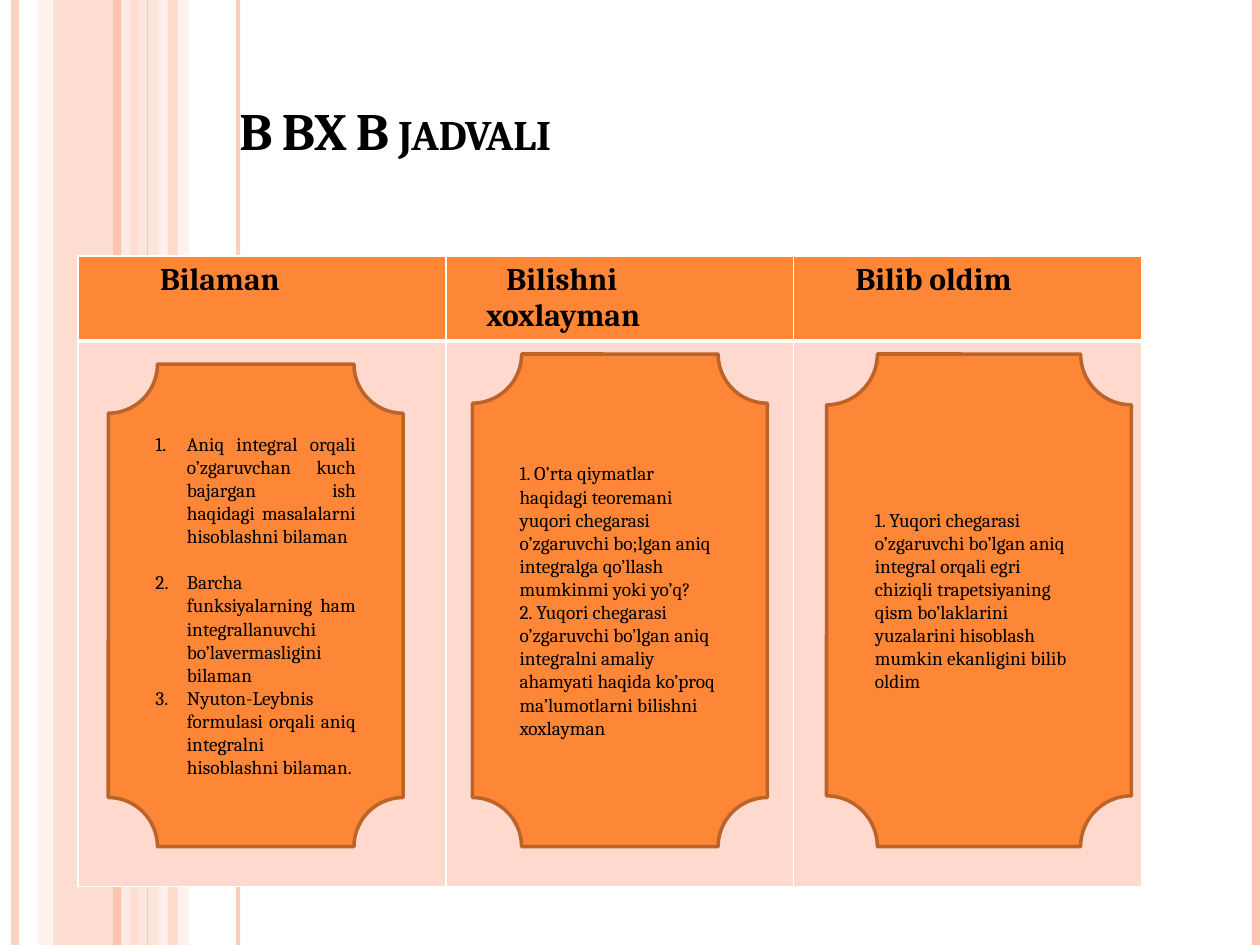
import pptx
import pptx.util
import pptx.dml.color
import pptx.enum.shapes
import pptx.enum.text
import pptx.oxml.ns
import lxml.etree

Inches, Pt = pptx.util.Inches, pptx.util.Pt
RGBColor = pptx.dml.color.RGBColor
SHAPE = pptx.enum.shapes.MSO_SHAPE
ANCHOR = pptx.enum.text.MSO_ANCHOR
ALIGN = pptx.enum.text.PP_ALIGN
qn = pptx.oxml.ns.qn

BLACK = RGBColor(0x00, 0x00, 0x00)
WHITE = RGBColor(0xFF, 0xFF, 0xFF)
ORANGE = RGBColor(0xFE, 0x86, 0x37)
BROWN = RGBColor(0xBC, 0x63, 0x29)
PEACH = RGBColor(0xFE, 0xC3, 0xAE)
PALE = RGBColor(0xFF, 0xD9, 0xCE)
PALEST = RGBColor(0xFF, 0xED, 0xE8)

FONT = "Cambria"

BANDS = [
    (0.42, 0.67, PEACH, 54),
    (0.3, 0.11, PALE, 36),
    (1.08, 0.2, PALE, 70),
    (1.25, 0.25, PALEST, 71),
    (1.33, 0.08, PEACH, 51),
]
STRIPES = [
    (0.12, 4.5, PEACH, 73),
    (1, 4.5, PALEST, 83),
    (0.93, 4.5, PEACH, 100),
    (1.89, 2.25, PEACH, 82),
    (1.17, 0.75, PEACH, 100),
    (9.97, 4.5, PEACH, 100),
]
HEADERS = [
    [("Bilaman", 0.55)],
    [("Bilishni", 0.38), ("xoxlayman", 0.22)],
    [("Bilib oldim", 0.39)],
]
KNOWN = [
    "Aniq integral orqali o’zgaruvchan kuch bajargan ish haqidagi masalalarni "
    "hisoblashni bilaman",
    "Barcha funksiyalarning ham integrallanuvchi bo’lavermasligini bilaman",
    "Nyuton-Leybnis formulasi orqali aniq integralni hisoblashni bilaman.",
]
WANTED = [
    "1. O’rta qiymatlar haqidagi teoremani yuqori chegarasi o’zgaruvchi bo;lgan "
    "aniq integralga qo’llash mumkinmi yoki yo’q?",
    "2. Yuqori chegarasi o’zgaruvchi bo’lgan aniq integralni amaliy ahamyati "
    "haqida ko’proq ma’lumotlarni bilishni xoxlayman",
]
LEARNED = [
    "1. Yuqori chegarasi o’zgaruvchi bo’lgan aniq integral orqali egri chiziqli "
    "trapetsiyaning qism bo’laklarini yuzalarini hisoblash mumkin ekanligini "
    "bilib oldim",
]


def set_alpha(fill, percent):
    """Make a solid fill partly transparent."""
    color = fill._xPr.find(qn("a:solidFill"))[0]
    lxml.etree.SubElement(color, qn("a:alpha")).set("val", str(percent * 1000))


def set_indent(p, left, first=0):
    """Indent a paragraph and its first line, in inches."""
    pPr = p._p.get_or_add_pPr()
    pPr.set("marL", str(Inches(left)))
    pPr.set("indent", str(Inches(first)))


def format_runs(p, size, bold=False):
    """Give the runs of a paragraph the slide's font."""
    for r in p.runs:
        r.font.name = FONT
        r.font.size = Pt(size)
        r.font.bold = bold
        r.font.color.rgb = BLACK


def add_band(s, left, width, color, opacity):
    """Add a translucent full-height band."""
    sp = s.shapes.add_shape(SHAPE.RECTANGLE, Inches(left), 0, Inches(width), Inches(7.5))
    sp.shadow.inherit = False
    sp.fill.solid()
    sp.fill.fore_color.rgb = color
    set_alpha(sp.fill, opacity)
    sp.line.fill.background()


def add_stripe(s, x, weight, color, opacity):
    """Add a full-height vertical line."""
    line = s.shapes.add_connector(
        pptx.enum.shapes.MSO_CONNECTOR.STRAIGHT, Inches(x), 0, Inches(x), Inches(7.5))
    line.line.width = Pt(weight)
    line.line.color.rgb = color
    set_alpha(line.line.fill, opacity)
    lxml.etree.SubElement(line._element.spPr, qn("a:effectLst"))


def set_title(s, text):
    """Place the title in small capitals in front of the bands."""
    sp = s.shapes.title
    s.shapes._spTree.append(sp._element)
    sp.left, sp.top, sp.width, sp.height = map(Inches, (0.7, 0.55, 8.55, 0.78))
    tf = sp.text_frame
    tf.text = text
    tf.vertical_anchor = ANCHOR.BOTTOM
    p = tf.paragraphs[0]
    p.alignment = ALIGN.LEFT
    set_indent(p, 1.1)
    format_runs(p, 30, bold=True)
    p.runs[0].font._element.set("cap", "small")


def style_cell(cell, color, bottom):
    """Fill a cell and draw its white borders."""
    tcPr = cell._tc.get_or_add_tcPr()
    for side, weight in (("L", 1), ("R", 1), ("T", 1), ("B", bottom)):
        ln = lxml.etree.SubElement(tcPr, qn("a:ln" + side))
        ln.set("w", str(Pt(weight)))
        fill = lxml.etree.SubElement(ln, qn("a:solidFill"))
        lxml.etree.SubElement(fill, qn("a:srgbClr")).set("val", str(WHITE))
    cell.fill.solid()
    cell.fill.fore_color.rgb = color


def add_columns_table(s):
    """Add the table with a header row and an empty body row."""
    table = s.shapes.add_table(
        2, 3, Inches(0.62), Inches(2.03), Inches(8.44), Inches(5)).table
    for column, width in zip(table.columns, (2.92, 2.76, 2.76)):
        column.width = Inches(width)
    for row, height in zip(table.rows, (0.67, 4.33)):
        row.height = Inches(height)
    for i, lines in enumerate(HEADERS):
        header = table.cell(0, i)
        header.text_frame.text = "\n".join(text for text, indent in lines)
        for p, (text, indent) in zip(header.text_frame.paragraphs, lines):
            set_indent(p, indent)
            format_runs(p, 18, bold=True)
        style_cell(header, ORANGE, 3)
        style_cell(table.cell(1, i), PALE, 1)


def add_plaque(s, left, top, width, height, items):
    """Add an orange plaque holding paragraphs and return its text frame."""
    sp = s.shapes.add_shape(SHAPE.PLAQUE, *map(Inches, (left, top, width, height)))
    sp.shadow.inherit = False
    sp.fill.solid()
    sp.fill.fore_color.rgb = ORANGE
    sp.line.color.rgb = BROWN
    sp.line.width = Pt(2)
    tf = sp.text_frame
    tf.word_wrap = True
    tf.vertical_anchor = ANCHOR.MIDDLE
    tf.text = "\n".join(items)
    for p in tf.paragraphs:
        p.alignment = ALIGN.LEFT
        format_runs(p, 11)
    return tf


def number_paragraphs(tf):
    """Turn paragraphs into a justified numbered list."""
    for p in tf.paragraphs:
        p.alignment = ALIGN.JUSTIFY
        set_indent(p, 0.25, -0.25)
        bullet = lxml.etree.SubElement(p._p.get_or_add_pPr(), qn("a:buAutoNum"))
        bullet.set("type", "arabicPeriod")
    tf.paragraphs[0].space_after = Pt(13)


def main():
    """Build the slide and save it."""
    prs = pptx.Presentation()
    prs.slide_width, prs.slide_height = Inches(10), Inches(7.5)
    s = prs.slides.add_slide(prs.slide_layouts[5])
    for band in BANDS:
        add_band(s, *band)
    for stripe in STRIPES:
        add_stripe(s, *stripe)
    set_title(s, "B BX B jadvali")
    add_columns_table(s)
    number_paragraphs(add_plaque(s, 0.86, 2.89, 2.34, 3.83, KNOWN))
    add_plaque(s, 3.75, 2.81, 2.34, 3.91, WANTED)
    add_plaque(s, 6.56, 2.81, 2.42, 3.91, LEARNED)
    prs.save("out.pptx")


if __name__ == "__main__":
    main()
